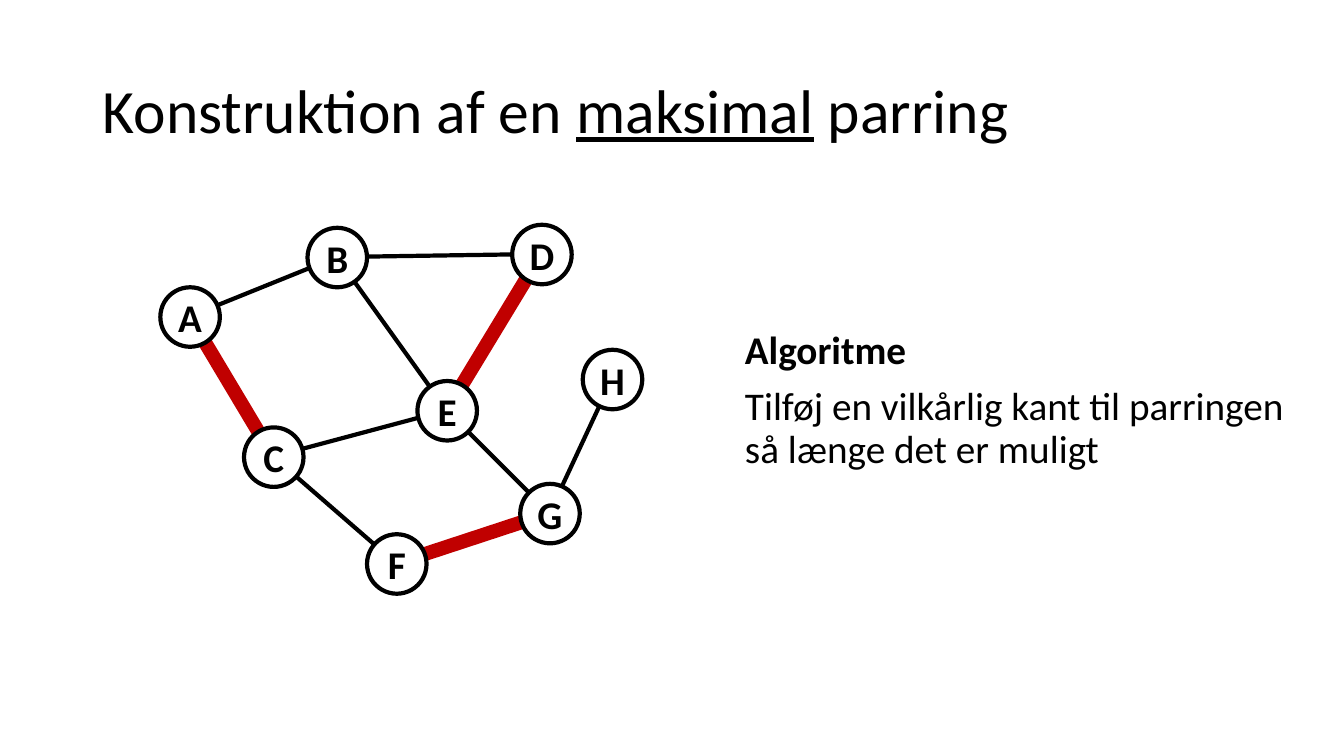
from typing import NamedTuple

from pptx import Presentation, util as u
from pptx.dml.color import RGBColor
from pptx.enum import shapes, text
from pptx.oxml.ns import qn
from lxml import etree

PX = 9144  # EMU per px, 100 px to the inch
FONT = "Calibri"
BLACK, WHITE, RED = "000000", "FFFFFF", "C00000"
NODE_SIZE = 59


class Node(NamedTuple):
    left: int
    top: int

    @property
    def centre(self) -> tuple[int, int]:
        return self.left + NODE_SIZE // 2, self.top + NODE_SIZE // 2


class Edge(NamedTuple):
    ends: str
    color: str = BLACK
    width: int = 3


class Run(NamedTuple):
    words: str
    bold: bool = False
    underline: bool = False


NODES = {
    "A": Node(159, 285),
    "B": Node(305, 226),
    "C": Node(242, 424),
    "D": Node(508, 223),
    "E": Node(414, 378),
    "F": Node(364, 530),
    "G": Node(516, 480),
    "H": Node(578, 347),
}
EDGES = [Edge(ends) for ends in ("AB", "BD", "BE", "CE", "CF", "EG", "GH")]
MATCHING = [Edge(ends, RED, 10) for ends in ("AC", "DE", "FG")]


def px(length: int) -> u.Emu:
    return u.Emu(length * PX)


def rgb(color: str) -> RGBColor:
    return RGBColor.from_string(color)


def style_font(font, size: int, bold: bool = False) -> None:
    font.name, font.size, font.bold = FONT, u.Pt(size), bold
    font.color.rgb = rgb(BLACK)


def draw_edge(slide, edge: Edge) -> None:
    start, end = (NODES[name].centre for name in edge.ends)
    line = slide.shapes.add_connector(
        shapes.MSO_CONNECTOR.STRAIGHT, *map(px, start + end))
    line.line.color.rgb = rgb(edge.color)
    line.line.width = u.Pt(edge.width)
    etree.SubElement(line._element.spPr, qn("a:effectLst"))


def draw_node(slide, name: str, node: Node) -> None:
    circle = slide.shapes.add_shape(
        shapes.MSO_SHAPE.OVAL, *map(px, (*node, NODE_SIZE, NODE_SIZE)))
    circle.shadow.inherit = False
    circle.fill.solid()
    circle.fill.fore_color.rgb = rgb(WHITE)
    circle.line.color.rgb = rgb(BLACK)
    circle.line.width = u.Pt(3)
    frame = circle.text_frame
    frame.word_wrap = False
    frame.vertical_anchor = text.MSO_ANCHOR.MIDDLE
    paragraph = frame.paragraphs[0]
    paragraph.text = name
    paragraph.alignment = text.PP_ALIGN.CENTER
    style_font(paragraph.font, 28, bold=True)


def draw_text(slide, box: tuple[int, int, int, int], lines: list[list[Run]],
              size: int, anchor: text.MSO_ANCHOR, space_before: int = 0) -> None:
    frame = slide.shapes.add_textbox(*map(px, box)).text_frame
    frame.word_wrap = True
    frame.vertical_anchor = anchor
    for index, runs in enumerate(lines):
        paragraph = frame.add_paragraph() if index else frame.paragraphs[0]
        paragraph.line_spacing = 0.9
        paragraph.space_before = u.Pt(space_before)
        style_font(paragraph.font, size)
        for words, bold, underline in runs:
            run = paragraph.add_run()
            run.text = words
            style_font(run.font, size, bold)
            run.font.underline = underline


def main() -> None:
    presentation = Presentation()
    presentation.slide_width, presentation.slide_height = px(1333), px(750)
    slide = presentation.slides.add_slide(presentation.slide_layouts[6])

    # Title and algorithm
    draw_text(slide, (92, 40, 1150, 145),
              [[Run("Konstruktion af en "), Run("maksimal", underline=True),
                Run(" parring")]],
              44, text.MSO_ANCHOR.MIDDLE)
    draw_text(slide, (729, 323, 592, 171),
              [[Run("Algoritme", bold=True)],
               [Run("Tilføj en vilkårlig kant til parringen "
                    "så længe det er muligt")]],
              28, text.MSO_ANCHOR.TOP, space_before=10)

    # Graph: edges, the matching in red, then nodes on top
    for edge in EDGES + MATCHING:
        draw_edge(slide, edge)
    for name, node in NODES.items():
        draw_node(slide, name, node)

    presentation.save("out.pptx")


if __name__ == "__main__":
    main()
